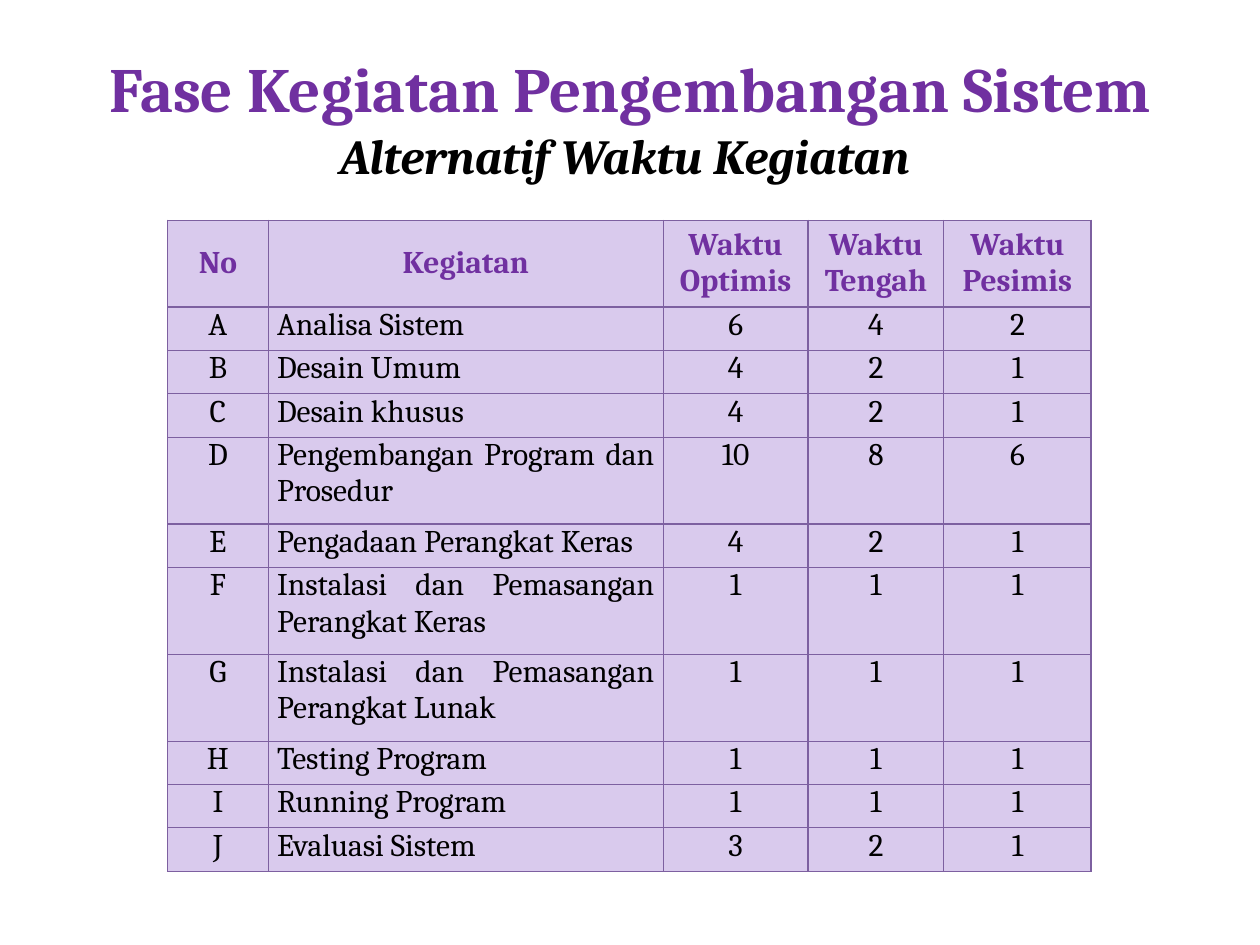
from dataclasses import dataclass

from lxml.etree import SubElement
from pptx import Presentation
from pptx.dml.color import RGBColor
from pptx.enum.text import MSO_ANCHOR, MSO_AUTO_SIZE, PP_ALIGN
from pptx.oxml.ns import qn
from pptx.util import Inches, Pt


@dataclass(frozen=True)
class Theme:
    """Colours, font and type sizes of the slide."""
    font: str = "Cambria"
    accent: str = "7030A0"
    ink: str = "000000"
    fill: str = "D9CAED"
    edge: str = "7D60A0"
    head: int = 36
    sub: int = 28
    body: int = 18
    gap: int = 6
    rule: float = 0.75


THEME = Theme()
WIDTH, HEIGHT = Inches(10), Inches(7.5)
COLS = (0.8, 3.14, 1.15, 1.08, 1.17)
HEADS = ("No", "Kegiatan", "Waktu Optimis", "Waktu Tengah", "Waktu Pesimis")
TASKS = (
    ("Analisa Sistem", 6, 4, 2, 1),
    ("Desain Umum", 4, 2, 1, 1),
    ("Desain khusus", 4, 2, 1, 1),
    ("Pengembangan Program dan Prosedur", 10, 8, 6, 2),
    ("Pengadaan Perangkat Keras", 4, 2, 1, 1),
    ("Instalasi dan Pemasangan Perangkat Keras", 1, 1, 1, 2),
    ("Instalasi dan Pemasangan Perangkat Lunak", 1, 1, 1, 2),
    ("Testing Program", 1, 1, 1, 1),
    ("Running Program", 1, 1, 1, 1),
    ("Evaluasi Sistem", 3, 2, 1, 1),
)


def share(left, top, width, height):
    """Turn shares of the slide into a box of lengths."""
    return (int(left * WIDTH), int(top * HEIGHT),
            int(width * WIDTH), int(height * HEIGHT))


def write(para, text, size=THEME.body, color=THEME.ink, bold=False,
          italic=False, align=PP_ALIGN.CENTER):
    """Add a formatted run to a paragraph."""
    para.alignment = align
    run = para.add_run()
    run.text = text
    font = run.font
    font.name, font.size = THEME.font, Pt(size)
    font.bold, font.italic = bold, italic
    font.color.rgb = RGBColor.from_string(color)


def border(cell):
    """Draw the four edges of a table cell."""
    props = cell._tc.get_or_add_tcPr()
    for side in ("lnL", "lnR", "lnT", "lnB"):
        line = SubElement(props, qn(f"a:{side}"), w=str(Pt(THEME.rule)))
        paint = SubElement(line, qn("a:solidFill"))
        SubElement(paint, qn("a:srgbClr"), val=THEME.edge)


def dress(cell, text, anchor=MSO_ANCHOR.TOP, **style):
    """Format one cell and write its text."""
    border(cell)
    cell.fill.solid()
    cell.fill.fore_color.rgb = RGBColor.from_string(THEME.fill)
    cell.margin_left = cell.margin_right = Inches(0.07)
    cell.margin_top = cell.margin_bottom = 0
    cell.vertical_anchor = anchor
    para = cell.text_frame.paragraphs[0]
    para.space_before = Pt(THEME.gap)
    write(para, text, **style)


def title(slide, box):
    """Fill the title placeholder with heading and subheading."""
    shape = slide.shapes.title
    shape.left, shape.top, shape.width, shape.height = box
    frame = shape.text_frame
    frame.word_wrap = True
    frame.auto_size = MSO_AUTO_SIZE.NONE
    frame.vertical_anchor = MSO_ANCHOR.MIDDLE
    para = frame.paragraphs[0]
    write(para, "Fase Kegiatan Pengembangan Sistem", size=THEME.head,
          color=THEME.accent, bold=True)
    para.add_line_break()
    write(para, "Alternatif Waktu Kegiatan ", size=THEME.sub,
          bold=True, italic=True)


def grid(slide, box):
    """Place the table of activities and their time estimates."""
    spans = [2] + [task[-1] for task in TASKS]
    table = slide.shapes.add_table(len(spans), len(COLS), *box).table
    table.first_row = table.horz_banding = False
    for col, part in zip(table.columns, COLS):
        col.width = int(box[2] * part / sum(COLS))
    for row, span in zip(table.rows, spans):
        row.height = int(box[3] * span / sum(spans))
    for col, text in enumerate(HEADS):
        dress(table.cell(0, col), text, anchor=MSO_ANCHOR.MIDDLE,
              color=THEME.accent, bold=True)
    for row, (mark, task) in enumerate(zip("ABCDEFGHIJ", TASKS), 1):
        for col, value in enumerate((mark, *task[:-1])):
            align = PP_ALIGN.JUSTIFY if col == 1 else PP_ALIGN.CENTER
            dress(table.cell(row, col), str(value), align=align)


def main():
    """Build and save the slide."""
    deck = Presentation()
    deck.slide_width, deck.slide_height = WIDTH, HEIGHT
    slide = deck.slides.add_slide(deck.slide_layouts[5])
    grid(slide, share(0.133, 0.233, 0.733, 0.689))
    title(slide, share(0.05, 0.04, 0.9, 0.167))
    deck.save("out.pptx")


if __name__ == "__main__":
    main()
